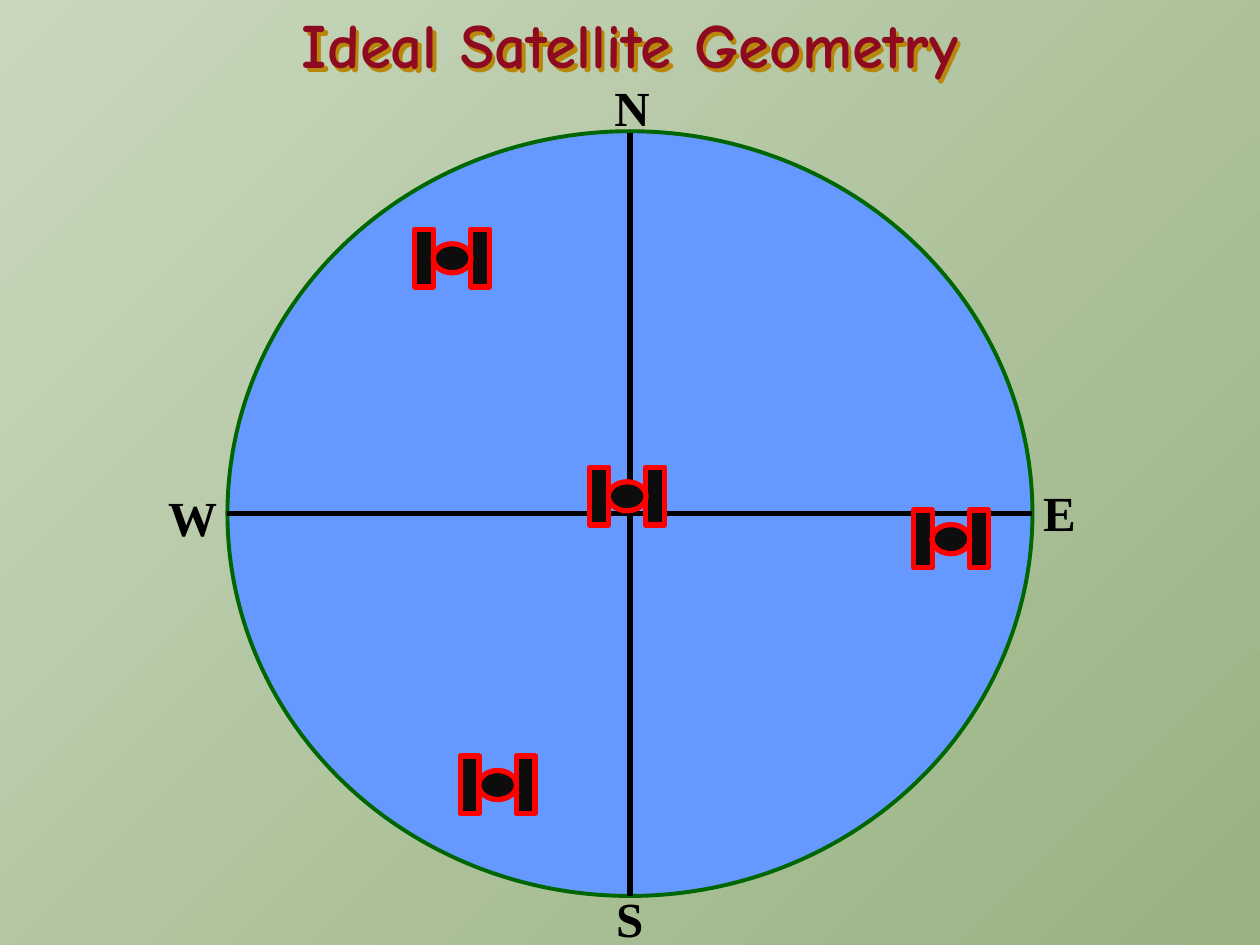
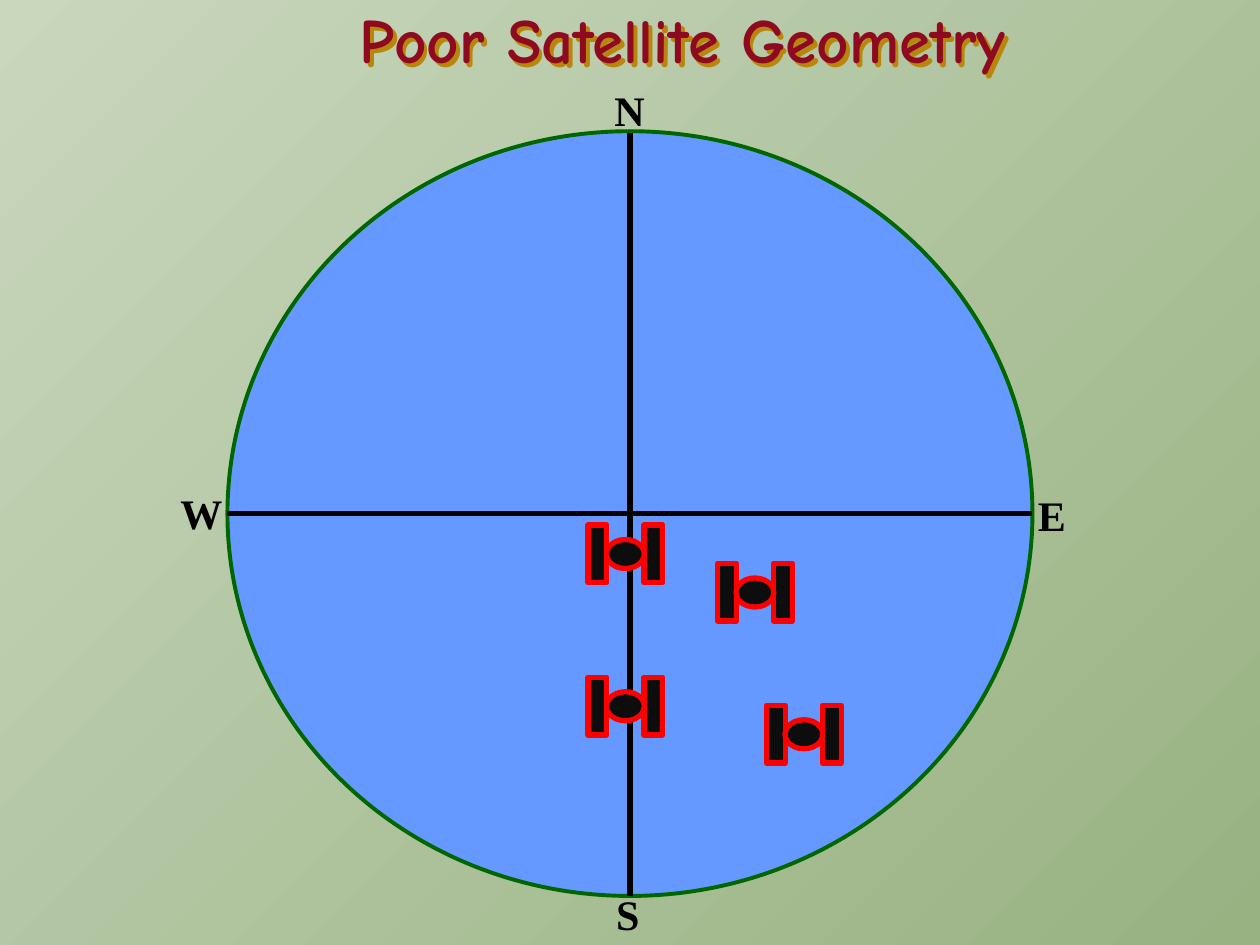
import lxml.etree
import pptx
import pptx.dml.color
import pptx.enum.shapes
import pptx.enum.text
import pptx.oxml.ns
import pptx.util

Pt = pptx.util.Pt
SHAPE = pptx.enum.shapes.MSO_SHAPE


def color(hex_string):
    return pptx.dml.color.RGBColor.from_string(hex_string)


class Deck:
    title_font, label_font = "Comic Neue", "Times New Roman"
    title_color, title_shadow = "8E0A20", "B8860B"
    sky, horizon, ink = "6699FF", "006600", "000000"
    satellite_fill, satellite_line = "0D0D0D", "FF0000"
    background_colors = "C9D7BD", "98B282"
    sky_left, sky_top, sky_width, sky_height = 130, 75, 460, 437

    def __init__(self):
        self.presentation = pptx.Presentation()
        self.presentation.slide_width = Pt(720)
        self.presentation.slide_height = Pt(540)
        self.slide = None
        fill = self.presentation.slide_master.background.fill
        fill.gradient()
        fill.gradient_angle = 315
        for position, (stop, hex_string) in enumerate(zip(fill.gradient_stops, self.background_colors)):
            stop.color.rgb = color(hex_string)
            stop.position = position

    def add_slide(self):
        self.slide = self.presentation.slides.add_slide(self.presentation.slide_layouts[5])

    def text(self, shape, words, font_name, size, hex_string):
        frame = shape.text_frame
        frame.word_wrap = True
        frame.text = words
        paragraph = frame.paragraphs[0]
        paragraph.font.name = font_name
        paragraph.font.size = Pt(size)
        paragraph.font.bold = True
        paragraph.font.color.rgb = color(hex_string)
        return frame, paragraph

    def title(self, words, left, height):
        shape = self.slide.shapes.title
        shape.left, shape.top, shape.width, shape.height = Pt(left), Pt(0), Pt(720), Pt(height)
        frame, paragraph = self.text(shape, words, self.title_font, 36, self.title_color)
        frame.auto_size = pptx.enum.text.MSO_AUTO_SIZE.NONE
        frame.vertical_anchor = pptx.enum.text.MSO_ANCHOR.MIDDLE
        paragraph.alignment = pptx.enum.text.PP_ALIGN.CENTER
        shape.fill.background()
        shape.shadow.inherit = False
        qn = pptx.oxml.ns.qn
        effects = shape.element.spPr.find(qn("a:effectLst"))
        shadow = lxml.etree.SubElement(effects, qn("a:outerShdw"), dist=str(Pt(2.83)),
                                       dir="2700000", algn="ctr", rotWithShape="0")
        lxml.etree.SubElement(shadow, qn("a:srgbClr"), val=self.title_shadow)

    def shape(self, shapes, kind, left, top, width, height, fill, line, line_width):
        shape = shapes.add_shape(kind, Pt(left), Pt(top), Pt(width), Pt(height))
        shape.shadow.inherit = False
        shape.fill.solid()
        shape.fill.fore_color.rgb = color(fill)
        shape.line.color.rgb = color(line)
        shape.line.width = Pt(line_width)

    def line(self, shapes, x1, y1, x2, y2):
        connector = shapes.add_connector(pptx.enum.shapes.MSO_CONNECTOR.STRAIGHT,
                                         Pt(x1), Pt(y1), Pt(x2), Pt(y2))
        connector.line.color.rgb = color(self.ink)
        connector.line.width = Pt(3)
        lxml.etree.SubElement(connector.element.spPr, pptx.oxml.ns.qn("a:effectLst"))

    def sky_plot(self):
        left, top, width, height = self.sky_left, self.sky_top, self.sky_width, self.sky_height
        self.shape(self.slide.shapes, SHAPE.OVAL, left, top, width, height, self.sky, self.horizon, 2.25)
        axes = self.slide.shapes.add_group_shape().shapes
        center_x, center_y = left + width / 2, top + height / 2
        self.line(axes, center_x, top + 1, center_x, top + height)
        self.line(axes, left, center_y, left + width, center_y)

    def compass_label(self, letter, left, top, size):
        width = 36 if letter == "W" else 29
        box = self.slide.shapes.add_textbox(Pt(left), Pt(top), Pt(width), Pt(size * 1.2 + 7.2))
        frame, _ = self.text(box, letter, self.label_font, size, self.ink)
        frame.auto_size = pptx.enum.text.MSO_AUTO_SIZE.SHAPE_TO_FIT_TEXT

    def satellite(self, left, top):
        parts = self.slide.shapes.add_group_shape().shapes
        style = self.satellite_fill, self.satellite_line, 3
        for panel_left in (left, left + 32):
            self.shape(parts, SHAPE.RECTANGLE, panel_left, top, 10.8, 33, *style)
        self.shape(parts, SHAPE.OVAL, left + 10.6, top + 8.3, 21.6, 16.6, *style)


def main():
    deck = Deck()
    geometries = [
        ("Ideal Satellite Geometry", 0, 50, 28,
         {"N": (344, 40.5), "S": (345, 504), "W": (89, 275), "E": (589, 272)},
         [(237, 131), (522, 291.5), (263, 432), (337, 267)]),
        ("Poor Satellite Geometry", 30, 44, 24,
         {"N": (344, 45), "S": (345, 504), "W": (96, 275), "E": (586, 276)},
         [(336, 387), (438, 403), (410, 322), (336, 300)]),
    ]
    for words, title_left, title_height, label_size, labels, satellites in geometries:
        deck.add_slide()
        deck.title(words, title_left, title_height)
        deck.sky_plot()
        for letter, (left, top) in labels.items():
            deck.compass_label(letter, left, top, label_size)
        for left, top in satellites:
            deck.satellite(left, top)
    deck.presentation.save("out.pptx")


if __name__ == "__main__":
    main()
